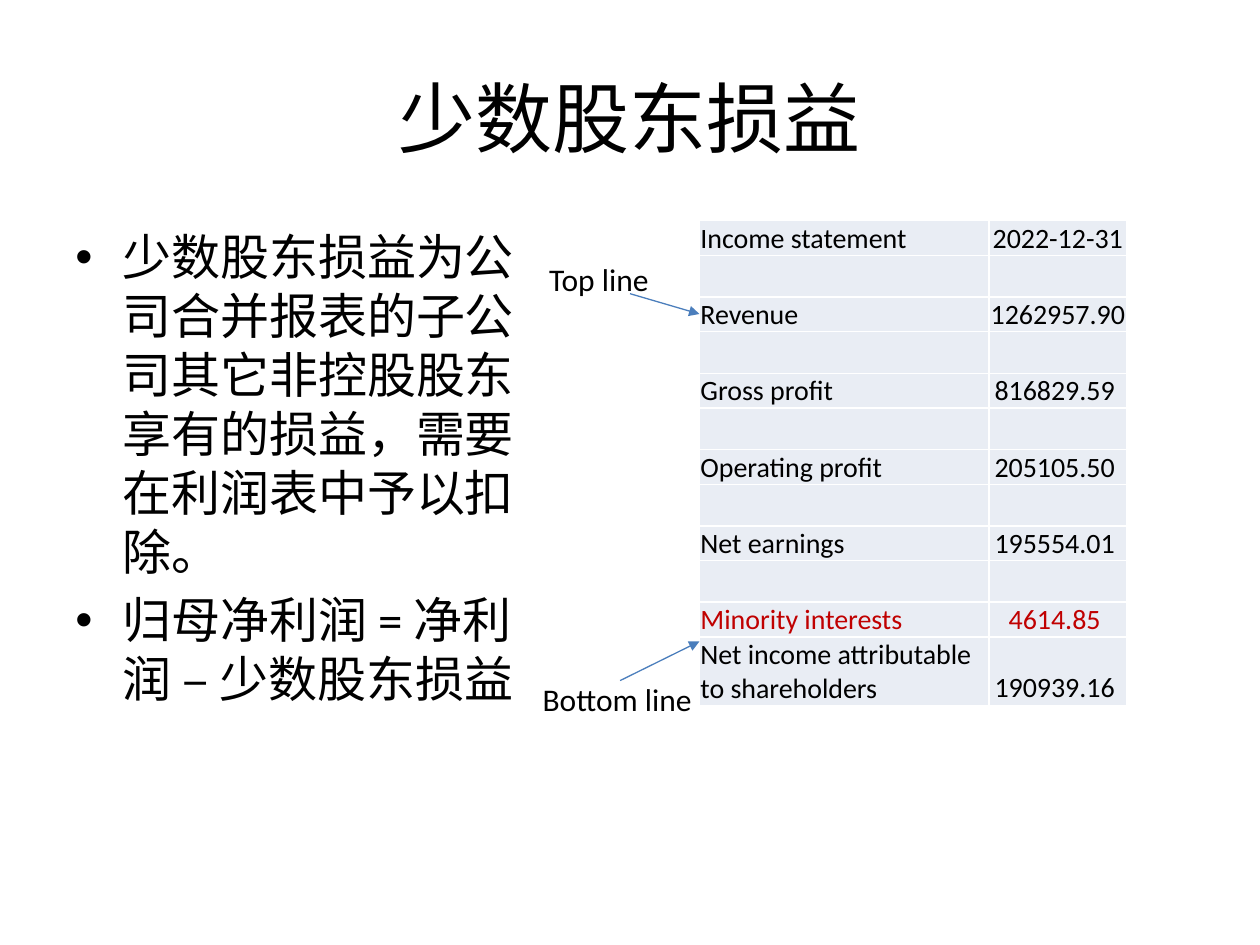
import pptx
import pptx.dml.color
import pptx.enum.shapes
import pptx.enum.text
import pptx.oxml
import pptx.oxml.ns
import pptx.util
from pptx.util import Cm, Pt

BLACK, RED, BLUE, PALE = "000000", "C00000", "4B7EBC", "E9EDF4"
ALIGN = pptx.enum.text.PP_ALIGN
ANCHOR = pptx.enum.text.MSO_ANCHOR

POINTS = [
    "少数股东损益为公司合并报表的子公司其它非控股股东享有的损益，需要在利润表中予以扣除。",
    "归母净利润 = 净利润 – 少数股东损益",
]
STATEMENT = [
    ("Income statement", "2022-12-31"),
    ("Revenue", "1262957.90 "),
    ("Gross profit", "816829.59 "),
    ("Operating profit", "205105.50 "),
    ("Net earnings", "195554.01 "),
    ("Minority interests", "4614.85 "),
    ("Net income attributable to shareholders", "190939.16 "),
]


def rgb(color):
    return pptx.dml.color.RGBColor.from_string(color)


def add_run(p, text, size, color=BLACK):
    r = p.add_run()
    r.text = text
    r.font.name = "Calibri"
    r.font.size = Pt(size)
    r.font.color.rgb = rgb(color)


def xml(tag, attributes=""):
    return pptx.oxml.parse_xml(
        f"<a:{tag} {pptx.oxml.ns.nsdecls('a')} {attributes}/>")


def add_title(s, text, left, top, width, height):
    sp = s.shapes.title
    sp.left, sp.top, sp.width, sp.height = left, top, width, height
    tf = sp.text_frame
    tf.vertical_anchor = ANCHOR.MIDDLE
    p = tf.paragraphs[0]
    p.alignment = ALIGN.CENTER
    add_run(p, text, 44)


def add_points(s, left, top, width, height):
    tf = s.shapes.add_textbox(left, top, width, height).text_frame
    tf.word_wrap = True
    for i, text in enumerate(POINTS):
        p = tf.add_paragraph() if i else tf.paragraphs[0]
        pPr = p._p.get_or_add_pPr()
        pPr.set("marL", str(Cm(0.95)))
        pPr.set("indent", str(-Cm(0.95)))
        pPr.append(xml("buFont", 'typeface="Arial"'))
        pPr.append(xml("buChar", 'char="•"'))
        if i:
            p.space_before = Pt(5.6)
        add_run(p, text, 28)


def fill_cell(cell, text, color, alignment):
    cell.fill.solid()
    cell.fill.fore_color.rgb = rgb(PALE)
    cell.vertical_anchor = ANCHOR.BOTTOM
    cell.margin_left = cell.margin_right = cell.margin_top = Cm(0.02)
    cell.margin_bottom = 0
    p = cell.text_frame.paragraphs[0]
    p.alignment = alignment
    if text:
        add_run(p, text, 16, color)


def add_statement(s, left, top, width, height):
    """Place the table, with an empty row after each item but the last two."""
    rows = []
    for item in STATEMENT[:-2]:
        rows += [item, ("", "")]
    rows += STATEMENT[-2:]
    table = s.shapes.add_table(len(rows), 2, left, top, width, height).table
    table.first_row = table.horz_banding = False
    table.columns[0].width = Cm(5.84)
    table.columns[1].width = width - Cm(5.84)
    for row, (label, value) in zip(table.rows, rows):
        row.height = Cm(0.69 if label else 0.84)
        color = RED if label == "Minority interests" else BLACK
        fill_cell(row.cells[0], label, color, ALIGN.LEFT)
        fill_cell(row.cells[1], value, color, ALIGN.CENTER)
    table.rows[len(rows) - 1].height = Cm(1.38)


def add_callout(s, text, left, top, width, start, end):
    """Place a label at left, top and an arrow given relative to it."""
    line = s.shapes.add_connector(
        pptx.enum.shapes.MSO_CONNECTOR.STRAIGHT,
        left + Cm(start[0]), top + Cm(start[1]),
        left + Cm(end[0]), top + Cm(end[1]))
    line.line.color.rgb = rgb(BLUE)
    line.line.width = Pt(0.75)
    line.line._get_or_add_ln().append(xml("tailEnd", 'type="triangle"'))
    line._element.spPr.append(xml("effectLst"))
    tf = s.shapes.add_textbox(left, top, width, Cm(1.02)).text_frame
    tf.word_wrap = True
    add_run(tf.paragraphs[0], text, 18)


def main():
    prs = pptx.Presentation()
    prs.slide_width, prs.slide_height = Cm(25.4), Cm(19.05)
    s = prs.slides.add_slide(prs.slide_layouts[5])
    add_title(s, "少数股东损益", Cm(1.27), Cm(0.76), Cm(22.86), Cm(3.18))
    add_points(s, Cm(1.27), Cm(4.45), Cm(10.24), Cm(12.57))
    add_statement(s, Cm(14.1), Cm(4.45), Cm(8.61), Cm(9.72))
    add_callout(s, "Top line", Cm(10.82), Cm(5.11), Cm(3),
                (1.88, 0.81), (3.28, 1.22))
    add_callout(s, "Bottom line", Cm(10.69), Cm(13.59), Cm(4.7),
                (1.81, 0.13), (3.41, -0.66))
    prs.save("out.pptx")


if __name__ == "__main__":
    main()
